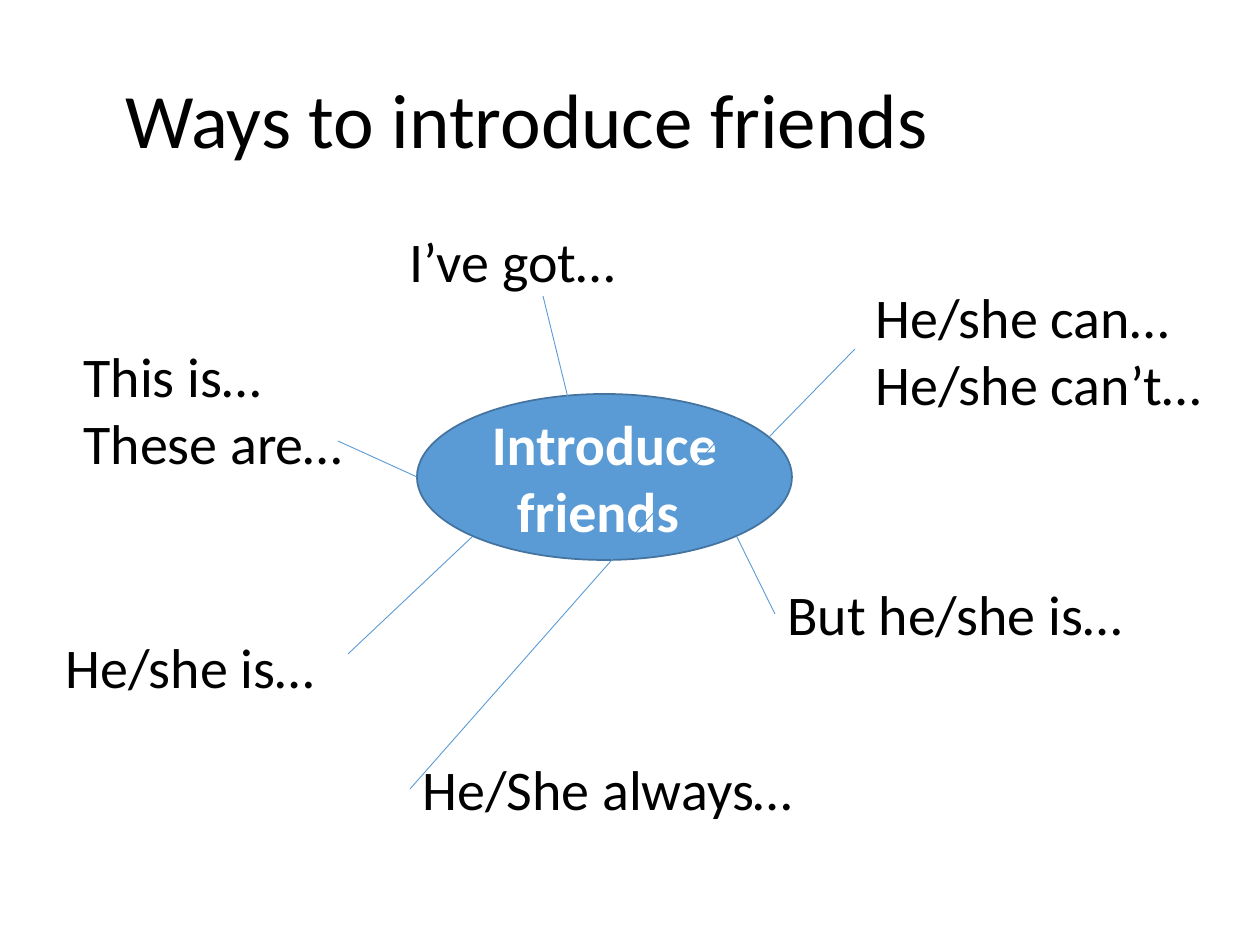
from lxml.etree import SubElement
from pptx import Presentation
from pptx.dml.color import RGBColor
from pptx.enum.shapes import MSO_CONNECTOR, MSO_SHAPE
from pptx.enum.text import MSO_ANCHOR, MSO_AUTO_SIZE, PP_ALIGN
from pptx.oxml.ns import qn
from pptx.util import Pt

COLORS = {"text": "000000", "hub": "5B9BD5", "outline": "43739E", "hub_text": "FFFFFF"}
FONT = "Calibri"
TITLE = ("Ways to introduce friends", (113, 32, 1086, 183))
HUB = ("Introduce friends ", (417, 394, 375, 166))
PHRASES = [
    ("This is…\nThese are…", (71, 335, 307, 149)),
    ("I’ve got…", (397, 220, 387, 81)),
    ("He/She always…", (410, 748, 451, 81)),
    ("But he/she is…", (775, 573, 387, 81)),
    ("He/she can…\nHe/she can’t…", (863, 276, 387, 149)),
    ("He/she is…", (53, 626, 387, 81)),
]
SPOKES = [
    ((338, 441), (417, 477)),
    ((543, 296), (569, 402)),
    ((410, 789), (737, 418)),
    ((348, 654), (472, 537)),
    ((769, 437), (855, 349)),
    ((775, 614), (737, 537)),
]


def px(*lengths):
    return [round(length * 914400 / 126) for length in lengths]


def color(name):
    return RGBColor.from_string(COLORS[name])


def write(shape, text, size, ink="text", bold=False, align=PP_ALIGN.LEFT):
    frame = shape.text_frame
    frame.text = text
    frame.word_wrap = True
    for para in frame.paragraphs:
        para.alignment = align
        for span in para.runs:
            span.font.name = FONT
            span.font.size = Pt(size)
            span.font.bold = bold
            span.font.color.rgb = color(ink)
    return frame


def add_title(page):
    text, area = TITLE
    title = page.shapes.title
    title.left, title.top, title.width, title.height = px(*area)
    frame = write(title, text, 44)
    frame.auto_size = MSO_AUTO_SIZE.NONE
    frame.vertical_anchor = MSO_ANCHOR.MIDDLE
    frame.paragraphs[0].line_spacing = 0.9


def add_hub(page):
    text, area = HUB
    hub = page.shapes.add_shape(MSO_SHAPE.OVAL, *px(*area))
    hub.shadow.inherit = False
    hub.fill.solid()
    hub.fill.fore_color.rgb = color("hub")
    hub.line.color.rgb = color("outline")
    hub.line.width = Pt(1)
    frame = write(hub, text, 32, "hub_text", True, PP_ALIGN.CENTER)
    frame.vertical_anchor = MSO_ANCHOR.MIDDLE


def add_phrase(page, text, area):
    box = page.shapes.add_textbox(*px(*area))
    write(box, text, 32).auto_size = MSO_AUTO_SIZE.SHAPE_TO_FIT_TEXT


def add_spoke(page, start, end):
    spoke = page.shapes.add_connector(MSO_CONNECTOR.STRAIGHT, *px(*start, *end))
    spoke.line.color.rgb = color("hub")
    spoke.line.width = Pt(0.5)
    SubElement(spoke._element.spPr, qn("a:effectLst"))


def main():
    deck = Presentation()
    deck.slide_width, deck.slide_height = px(1260, 945)
    page = deck.slides.add_slide(deck.slide_layouts[5])
    add_title(page)
    add_hub(page)
    for text, area in PHRASES:
        add_phrase(page, text, area)
    for start, end in SPOKES:
        add_spoke(page, start, end)
    deck.save("out.pptx")


if __name__ == "__main__":
    main()
